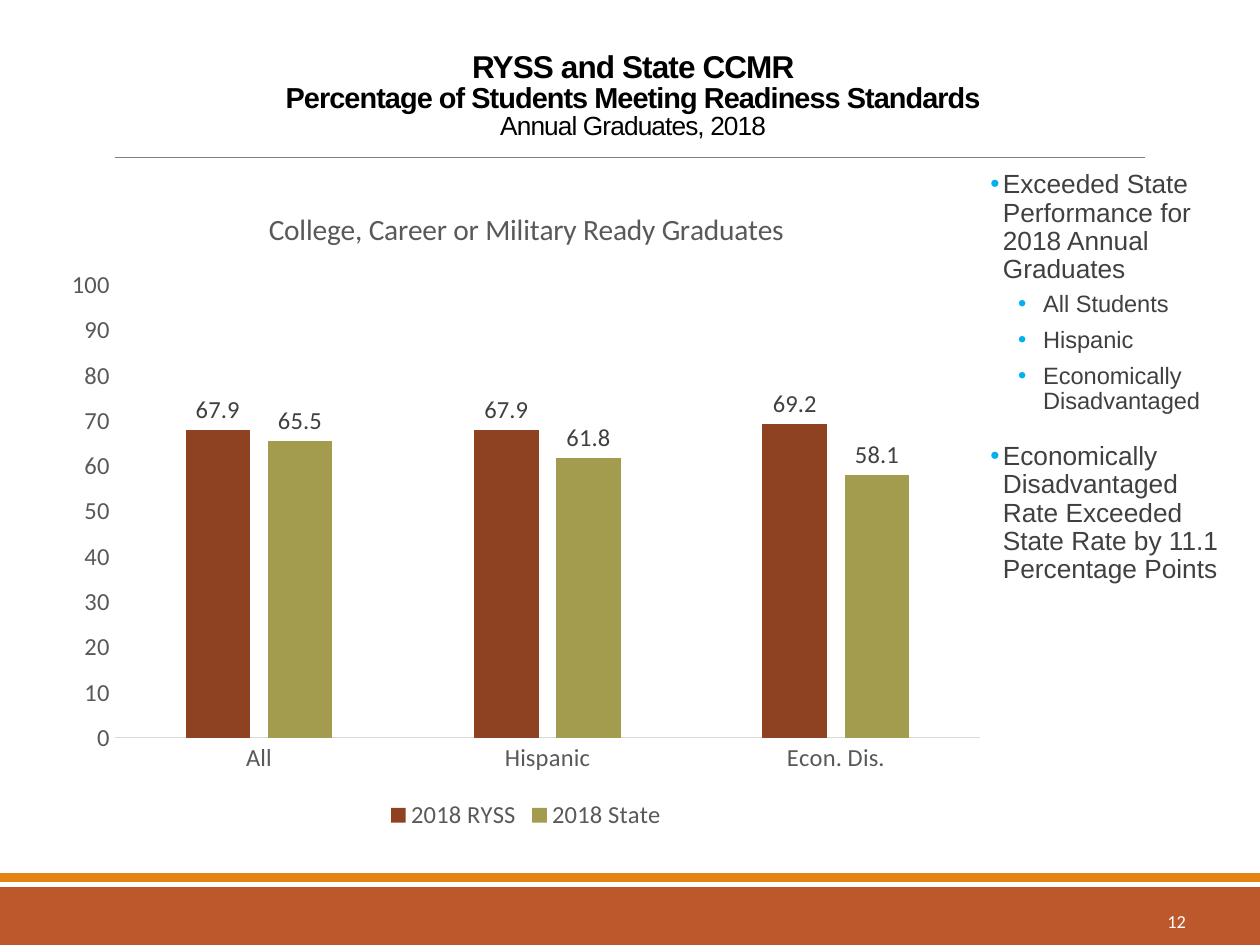
from lxml.etree import SubElement
from pptx import Presentation
from pptx.chart.data import CategoryChartData
from pptx.dml.color import RGBColor
from pptx.enum.chart import XL_CHART_TYPE, XL_LABEL_POSITION, XL_LEGEND_POSITION, XL_TICK_MARK
from pptx.enum.shapes import MSO_CONNECTOR, MSO_SHAPE
from pptx.enum.text import MSO_ANCHOR, MSO_AUTO_SIZE, PP_ALIGN
from pptx.oxml.ns import qn
from pptx.util import Inches, Pt

BULLET_FORMATS = [
    {"size": 15, "margin": 0.1, "indent": -0.1, "before": 12, "after": 2},
    {"size": 13.5, "margin": 0.42, "indent": -0.2, "before": 2, "after": 4},
]


def color(value):
    return RGBColor.from_string(value)


def set_attributes(target, values):
    for name, value in values.items():
        setattr(target, name, value)


def format_font(font, size, fill, name="Calibri", bold=False):
    set_attributes(font, {"size": Pt(size), "name": name, "bold": bold})
    font.fill.solid()
    font.fill.fore_color.rgb = color(fill)


def add_band(slide, top, height, fill):
    band = slide.shapes.add_shape(
        MSO_SHAPE.RECTANGLE, 0, Inches(top), Inches(10), Inches(height))
    band.shadow.inherit = False
    band.fill.solid()
    band.fill.fore_color.rgb = color(fill)
    band.line.fill.background()


def add_rule(slide, left, right, top):
    rule = slide.shapes.add_connector(
        MSO_CONNECTOR.STRAIGHT, Inches(left), Inches(top), Inches(right), Inches(top))
    rule.line.color.rgb = color("808080")
    rule.line.width = Pt(0.5)
    SubElement(rule._element.spPr, qn("a:effectLst"))


def fill_title(slide, lines):
    title = slide.shapes.title
    set_attributes(title, {"left": Inches(0.9), "top": Inches(0.31),
                           "width": Inches(8.25), "height": Inches(0.86)})
    set_attributes(title.text_frame, {"vertical_anchor": MSO_ANCHOR.BOTTOM,
                                      "auto_size": MSO_AUTO_SIZE.NONE, "word_wrap": True})
    paragraph = title.text_frame.paragraphs[0]
    set_attributes(paragraph, {"alignment": PP_ALIGN.CENTER, "line_spacing": 0.85})
    for index, (text, size, bold) in enumerate(lines):
        if index:
            paragraph.add_line_break()
        run = paragraph.add_run()
        run.text = text
        format_font(run.font, size, "000000", "Arial", bold)
        run.font._element.set("spc", "-50")


def add_slide_number(slide, number):
    box = slide.shapes.add_textbox(Inches(8.43), Inches(7.11), Inches(1.08), Inches(0.4))
    set_attributes(box.text_frame, {"word_wrap": True, "vertical_anchor": MSO_ANCHOR.MIDDLE})
    paragraph = box.text_frame.paragraphs[0]
    paragraph.alignment = PP_ALIGN.RIGHT
    run = paragraph.add_run()
    run.text = number
    format_font(run.font, 10.5, "FFFFFF")


def add_bullet(paragraph, text, level):
    style = BULLET_FORMATS[level]
    set_attributes(paragraph, {"level": level, "line_spacing": 0.9,
                               "space_before": Pt(style["before"]),
                               "space_after": Pt(style["after"])})
    run = paragraph.add_run()
    run.text = text
    format_font(run.font, style["size"], "404040", "Arial")
    properties = paragraph._p.get_or_add_pPr()
    properties.set("marL", str(Inches(style["margin"])))
    properties.set("indent", str(Inches(style["indent"])))
    bullet_color = SubElement(properties, qn("a:buClr"))
    SubElement(bullet_color, qn("a:srgbClr"), val="00B0F0")
    SubElement(properties, qn("a:buFont"), typeface="Arial")
    SubElement(properties, qn("a:buChar"), char="•")


def add_findings(slide, findings):
    box = slide.shapes.add_textbox(Inches(7.86), Inches(1.31), Inches(1.96), Inches(3.57))
    frame = box.text_frame
    set_attributes(frame, {"word_wrap": True, "margin_left": 0, "margin_right": 0})
    for index, (text, level) in enumerate(findings):
        paragraph = frame.add_paragraph() if index else frame.paragraphs[0]
        add_bullet(paragraph, text, level)


def format_axis(axis):
    set_attributes(axis, {"has_major_gridlines": False,
                          "major_tick_mark": XL_TICK_MARK.NONE,
                          "minor_tick_mark": XL_TICK_MARK.NONE})
    format_font(axis.tick_labels.font, 14, "595959")


def format_series(series, fill):
    series.format.fill.solid()
    series.format.fill.fore_color.rgb = color(fill)
    labels = series.data_labels
    set_attributes(labels, {"show_value": True, "position": XL_LABEL_POSITION.OUTSIDE_END})
    format_font(labels.font, 14, "404040")


def add_readiness_chart(slide, title, categories, series_rows):
    data = CategoryChartData()
    data.categories = categories
    for name, values, fill in series_rows:
        data.add_series(name, values)
    chart = slide.shapes.add_chart(
        XL_CHART_TYPE.COLUMN_CLUSTERED, Inches(0.42), Inches(1.46),
        Inches(7.51), Inches(5.17), data).chart
    format_font(chart.font, 14, "000000")
    set_attributes(chart, {"has_title": True, "has_legend": True})
    title_run = chart.chart_title.text_frame.paragraphs[0].add_run()
    title_run.text = title
    format_font(title_run.font, 16.8, "595959")
    chart.chart_title.include_in_layout = False
    set_attributes(chart.legend, {"position": XL_LEGEND_POSITION.BOTTOM,
                                  "include_in_layout": False})
    format_font(chart.legend.font, 14, "595959")
    for axis in (chart.category_axis, chart.value_axis):
        format_axis(axis)
    chart.category_axis.format.line.color.rgb = color("D9D9D9")
    chart.category_axis.format.line.width = Pt(0.75)
    chart.value_axis.format.line.fill.background()
    set_attributes(chart.value_axis, {"minimum_scale": 0, "maximum_scale": 100,
                                      "major_unit": 10})
    plot = chart.plots[0]
    set_attributes(plot, {"gap_width": 219, "overlap": -27, "vary_by_categories": False})
    for series, (name, values, fill) in zip(plot.series, series_rows):
        format_series(series, fill)


def main():
    presentation = Presentation()
    presentation.slide_width = Inches(10)
    presentation.slide_height = Inches(7.5)
    slide = presentation.slides.add_slide(presentation.slide_layouts[5])
    add_band(slide, 7.04, 0.46, "BD582C")
    add_band(slide, 6.93, 0.07, "E48312")
    add_rule(slide, 0.91, 9.09, 1.25)
    add_slide_number(slide, "12")
    fill_title(slide, [
        ("RYSS and State CCMR", 18, True),
        ("Percentage of Students Meeting Readiness Standards", 16.5, True),
        ("Annual Graduates, 2018", 15, False),
    ])
    add_readiness_chart(
        slide, "College, Career or Military Ready Graduates",
        ["All", "Hispanic", "Econ. Dis."],
        [("2018 RYSS", (67.9, 67.9, 69.2), "8E4221"),
         ("2018 State", (65.5, 61.8, 58.1), "A39B4E")])
    add_findings(slide, [
        ("Exceeded State Performance for 2018 Annual Graduates", 0),
        ("All Students", 1),
        ("Hispanic", 1),
        ("Economically Disadvantaged", 1),
        ("Economically Disadvantaged Rate Exceeded State Rate by 11.1 Percentage Points", 0),
    ])
    presentation.save("out.pptx")


if __name__ == "__main__":
    main()
